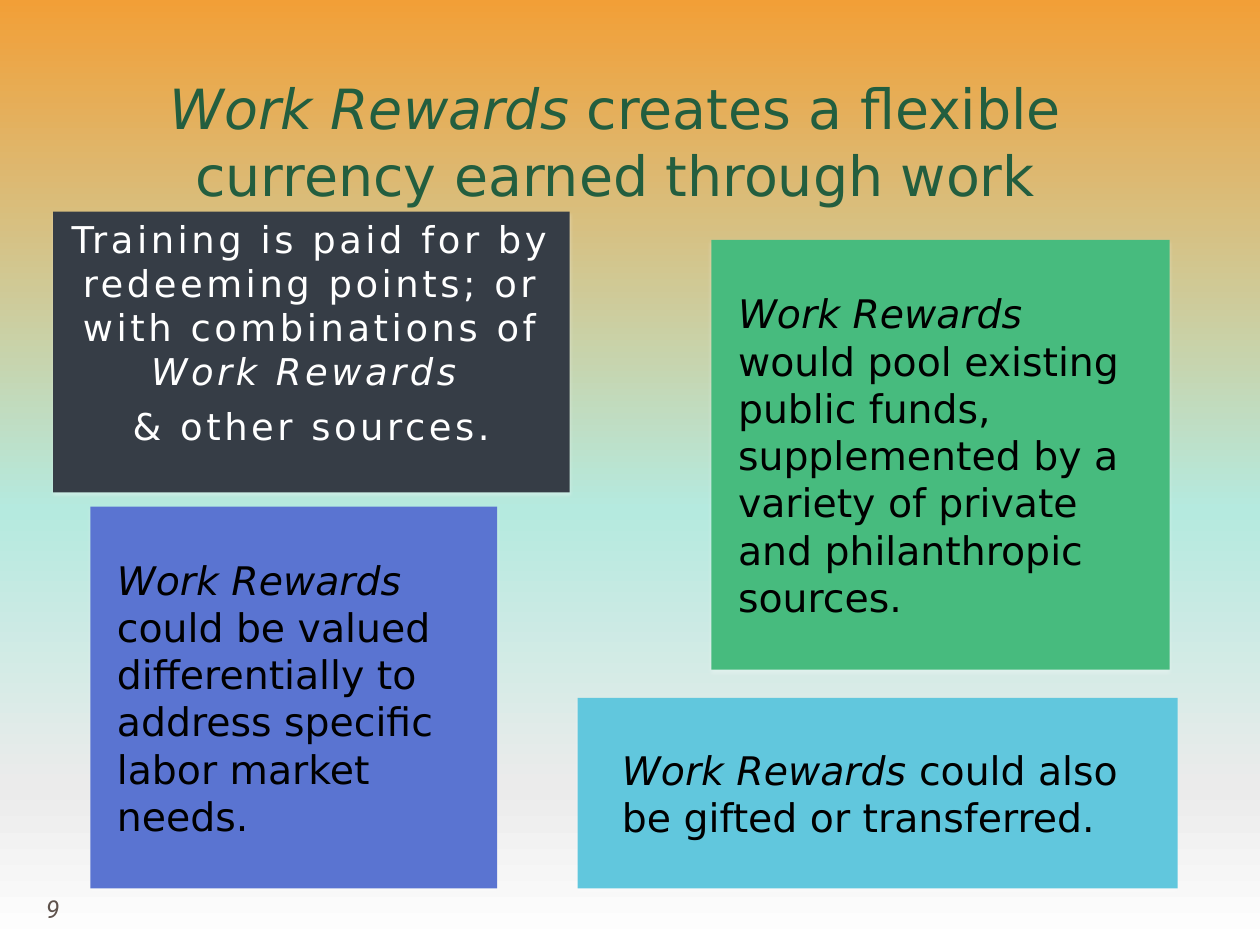
from lxml.etree import SubElement
from pptx import Presentation
from pptx.dml.color import RGBColor
from pptx.enum.text import MSO_ANCHOR as ANCHOR, MSO_AUTO_SIZE as AUTO, PP_ALIGN as ALIGN
from pptx.enum.shapes import MSO_SHAPE
from pptx.oxml import parse_xml
from pptx.oxml.ns import nsdecls, qn
from pptx.util import Inches, Pt

BLACK = RGBColor(0x00, 0x00, 0x00)
WHITE = RGBColor(0xFF, 0xFF, 0xFF)
DARK_GREEN = RGBColor(0x23, 0x5E, 0x3F)
SLATE = RGBColor(0x36, 0x3D, 0x46)
CYAN = RGBColor(0x61, 0xC7, 0xDD)
GREEN = RGBColor(0x47, 0xBB, 0x7E)
BLUE = RGBColor(0x5A, 0x74, 0xD1)
BROWN = RGBColor(0x5E, 0x52, 0x4C)
SKY = [(0, RGBColor(0xF2, 0x9F, 0x37)), (54, RGBColor(0xB5, 0xEA, 0xDF)),
       (83, RGBColor(0xEB, 0xEB, 0xEB)), (100, WHITE)]

PROGRAM = "Work Rewards"


def set_background(s, stops):
    fill = s.background.fill
    fill.gradient()
    fill.gradient_angle = 270
    gs_list = s._element.find(".//" + qn("a:gsLst"))
    gs_list.clear()
    for pos, color in stops:
        gs = SubElement(gs_list, qn("a:gs"), pos=str(pos * 1000))
        SubElement(gs, qn("a:srgbClr"), val=str(color))


def place(sp, left, top, width, height):
    sp.left, sp.top = Inches(left), Inches(top)
    sp.width, sp.height = Inches(width), Inches(height)


def paint(sp, color):
    """Solid fill without outline, with a faint white shadow below."""
    sp.fill.solid()
    sp.fill.fore_color.rgb = color
    sp.line.fill.background()
    sp.shadow.inherit = False
    sp._element.spPr.find(qn("a:effectLst")).append(parse_xml(
        f'<a:outerShdw {nsdecls("a")} blurRad="38100" dist="25400" dir="5760000" rotWithShape="0">'
        '<a:srgbClr val="FFFFFF"><a:alpha val="30000"/></a:srgbClr></a:outerShdw>'))


def frame(sp, anchor, insets=None):
    tf = sp.text_frame
    tf.word_wrap = True
    tf.auto_size = AUTO.NONE
    tf.vertical_anchor = anchor
    if insets:
        (tf.margin_left, tf.margin_top,
         tf.margin_right, tf.margin_bottom) = map(Inches, insets)
    return tf


def add_text(p, text, size=32, color=BLACK, font="DejaVu Sans", italic=False, spacing=None):
    r = p.add_run()
    r.text = text
    r.font.size = Pt(size)
    r.font.name = font
    r.font.italic = italic
    r.font.color.rgb = color
    if spacing:
        r._r.get_or_add_rPr().set("spc", str(round(spacing * 100)))


def add_title(s):
    place(s.shapes.title, 0.6, 0.51, 12.69, 1.88)
    p = frame(s.shapes.title, ANCHOR.BOTTOM).paragraphs[0]
    p.alignment = ALIGN.CENTER
    add_text(p, PROGRAM, size=45, color=DARK_GREEN, italic=True)
    add_text(p, " creates a flexible currency earned through work", size=45, color=DARK_GREEN)


def add_training_body(s):
    body = s.placeholders[1]
    place(body, 0.6, 2.39, 5.83, 3.17)
    paint(body, SLATE)
    tf = frame(body, ANCHOR.TOP)
    style = dict(size=30, color=WHITE, spacing=2.9)
    first, last = tf.paragraphs[0], tf.add_paragraph()
    for p in (first, last):
        p.alignment = ALIGN.CENTER
        p.space_before, p.space_after = Pt(0), Pt(8.5)
        pPr = p._p.get_or_add_pPr()
        pPr.set("marL", "0")
        pPr.set("indent", "0")
        SubElement(pPr, qn("a:buNone"))
    add_text(first, "Training is paid for by redeeming points; or with combinations of ", **style)
    add_text(first, PROGRAM + " ", italic=True, **style)
    add_text(last, "& other sources.", **style)


def add_card(s, box, color, text, left_inset=0.3, right_inset=0.3):
    sp = s.shapes.add_shape(MSO_SHAPE.RECTANGLE, *map(Inches, box))
    paint(sp, color)
    p = frame(sp, ANCHOR.MIDDLE, (left_inset, 0, right_inset, 0)).paragraphs[0]
    p.alignment = ALIGN.LEFT
    add_text(p, PROGRAM + " ", italic=True)
    add_text(p, text)


def add_page_number(s, number):
    sp = s.shapes.add_textbox(*map(Inches, (0.17, 10.03, 0.85, 0.45)))
    p = frame(sp, ANCHOR.MIDDLE, (0.06,) * 4).paragraphs[0]
    p.alignment = ALIGN.CENTER
    add_text(p, number, size=20, color=BROWN, font="Roboto", italic=True)


def main():
    prs = Presentation()
    prs.slide_width, prs.slide_height = Inches(14.22), Inches(10.67)
    s = prs.slides.add_slide(prs.slide_layouts[1])
    set_background(s, SKY)

    # Title and training panel
    add_title(s)
    add_training_body(s)

    # Cards on how the currency works
    add_card(s, (6.52, 7.88, 6.77, 2.15), CYAN, "could also be gifted or transferred.",
             left_inset=0.5, right_inset=0.1)
    add_card(s, (8.03, 2.71, 5.17, 4.85), GREEN,
             "would pool existing public funds, supplemented by a variety of "
             "private and philanthropic sources.")
    add_card(s, (1.02, 5.72, 4.59, 4.31), BLUE,
             "could be valued differentially to address specific labor market needs.")

    # Page number
    add_page_number(s, "9")
    prs.save("out.pptx")


if __name__ == "__main__":
    main()
